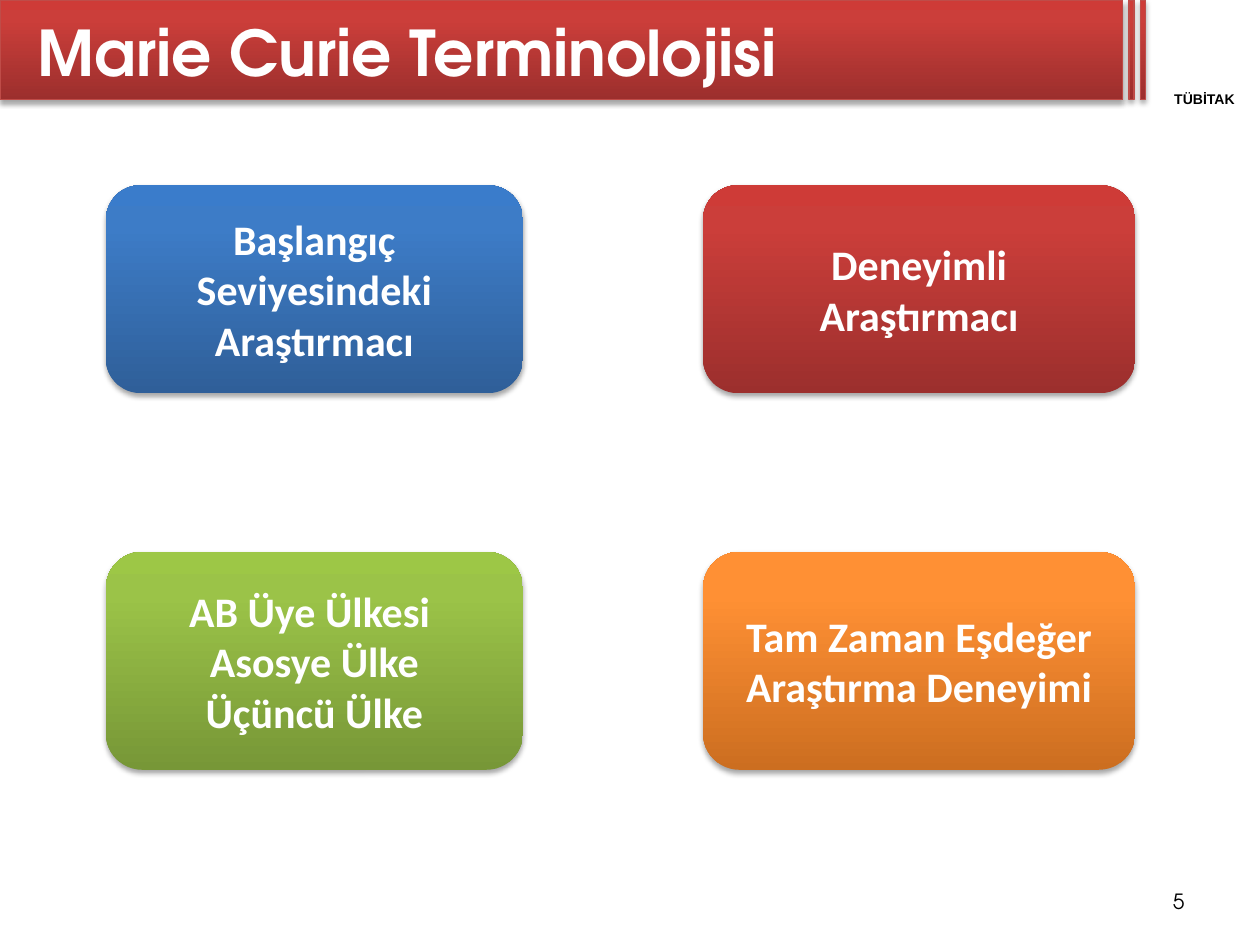
from lxml import etree
from pptx import Presentation
from pptx.dml.color import RGBColor
from pptx.enum.shapes import MSO_SHAPE
from pptx.enum.text import MSO_ANCHOR, MSO_AUTO_SIZE, PP_ALIGN
from pptx.oxml.ns import qn
from pptx.util import Inches, Pt

RECTANGLE, ROUNDED = MSO_SHAPE.RECTANGLE, MSO_SHAPE.ROUNDED_RECTANGLE
LEFT, CENTER, RIGHT = PP_ALIGN.LEFT, PP_ALIGN.CENTER, PP_ALIGN.RIGHT
MIDDLE, TOP = MSO_ANCHOR.MIDDLE, MSO_ANCHOR.TOP
NO_AUTOFIT = MSO_AUTO_SIZE.NONE

COLORS = {"white": "FFFFFF", "black": "000000", "bar line": "BF4C48"}
# Dark bottom, light at 80 %, top
GRADIENTS = {
    "blue": ("2F5F99", "3D7CC7", "3A7CCB"),
    "red": ("9C2F2D", "CB3E3A", "CE3B37"),
    "green": ("779737", "9BC348", "9DC746"),
    "orange": ("CC6E20", "FF9034", "FF9136"),
}
HEADING_FONT = "TeX Gyre Adventor"


def write_text(shape, lines, font="Calibri", size=24, color="white", bold=True,
               align=CENTER, anchor=MIDDLE, insets=(0.1, 0.05), wrap=True):
    frame = shape.text_frame
    frame.auto_size = NO_AUTOFIT
    frame.word_wrap = wrap
    frame.vertical_anchor = anchor
    frame.margin_left = frame.margin_right = Inches(insets[0])
    frame.margin_top = frame.margin_bottom = Inches(insets[1])
    frame.text = "\n".join(lines)
    for paragraph in frame.paragraphs:
        paragraph.alignment = align
        for run in paragraph.runs:
            run.font.name, run.font.size, run.font.bold = font, Pt(size), bold
            run.font.color.rgb = RGBColor.from_string(COLORS[color])


def add_block(kind, left, top, width, height, gradient):
    """Add a shape with a vertical three-stop gradient and a soft shadow."""
    shape = slide.shapes.add_shape(
        kind, Inches(left), Inches(top), Inches(width), Inches(height))
    shape.fill.gradient()
    shape.fill.gradient_angle = 90
    properties = shape._element.spPr
    stops = properties.find(".//" + qn("a:gsLst"))
    stops.clear()
    for position, color in zip((0, 80000, 100000), GRADIENTS[gradient]):
        stop = etree.SubElement(stops, qn("a:gs"), pos=str(position))
        etree.SubElement(stop, qn("a:srgbClr"), val=color)
    shape.line.fill.background()
    shape.shadow.inherit = False
    shadow = etree.SubElement(
        properties.find(qn("a:effectLst")), qn("a:outerShdw"),
        blurRad=str(Pt(3.1)), dist=str(Pt(1.8)), dir="5400000", rotWithShape="0")
    shadow_color = etree.SubElement(shadow, qn("a:srgbClr"), val=COLORS["black"])
    etree.SubElement(shadow_color, qn("a:alpha"), val="35000")
    return shape


presentation = Presentation()
presentation.slide_width, presentation.slide_height = Inches(10), Inches(7.5)
slide = presentation.slides.add_slide(presentation.slide_layouts[5])

# Header bar and its two thin stripes
BAR_HEIGHT = 0.79
for left, width in ((0, 8.91), (8.96, 0.04), (9.05, 0.04)):
    bar = add_block(RECTANGLE, left, 0, width, BAR_HEIGHT, "red")
    bar.line.color.rgb = RGBColor.from_string(COLORS["bar line"])
    bar.line.width = Pt(0.75)

# Institution label
label = slide.shapes.add_textbox(Inches(9.05), Inches(0.72), Inches(1.02), Inches(0.13))
write_text(label, ["TÜBİTAK"], font="Arial", size=8, color="black",
           anchor=TOP, insets=(0, 0))

# Title, brought in front of the header bar
title = slide.shapes.title
title.left, title.top = Inches(0.2), Inches(0.02)
title.width, title.height = Inches(8.5), Inches(0.77)
write_text(title, ["Marie Curie Terminolojisi"], font=HEADING_FONT, size=36, align=LEFT)
slide.shapes._spTree.append(title._element)

# Slide number
number = slide.shapes.add_textbox(Inches(7.17), Inches(6.95), Inches(2.33), Inches(0.4))
write_text(number, ["5"], font=HEADING_FONT, size=12, color="black",
           bold=False, align=RIGHT)

# Two by two grid of terms
COLUMNS = ((0.84, 3.31), (5.58, 3.43))  # left, width
ROWS = ((1.47, 1.65), (4.38, 1.73))  # top, height
TERMS = (
    (0, 0, "blue", ["Başlangıç Seviyesindeki Araştırmacı"]),
    (0, 1, "green", ["AB Üye Ülkesi ", "Asosye Ülke", "Üçüncü Ülke"]),
    (1, 0, "red", ["Deneyimli Araştırmacı"]),
    (1, 1, "orange", ["Tam Zaman Eşdeğer Araştırma Deneyimi"]),
)
for column, row, gradient, lines in TERMS:
    left, width = COLUMNS[column]
    top, height = ROWS[row]
    term = add_block(ROUNDED, left, top, width, height, gradient)
    write_text(term, lines, insets=(0.24, 0.21))

presentation.save("out.pptx")
